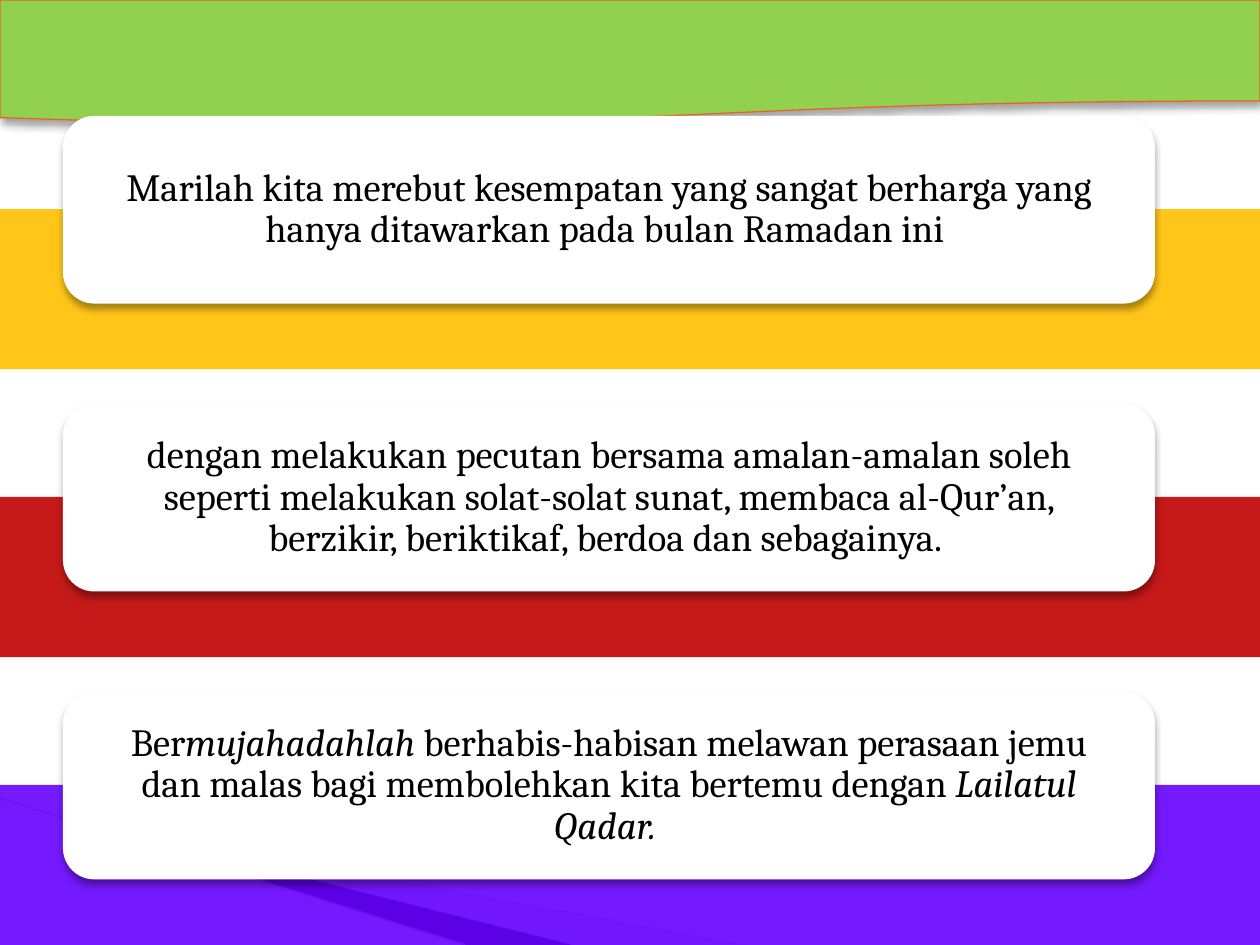
"""Builds a slide with three message cards over coloured bands."""
from lxml.etree import SubElement
from pptx import Presentation
from pptx.dml.color import RGBColor
from pptx.enum.shapes import MSO_CONNECTOR, MSO_SHAPE
from pptx.enum.text import MSO_ANCHOR, PP_ALIGN
from pptx.oxml.ns import qn
from pptx.util import Pt

COLORS = {
    "white": "FFFFFF", "black": "000000", "green": "92D050", "orange": "EB641B",
    "gold": "FFC000", "red": "C00000", "violet": "6600FF",
    "pale": "A0CBDC", "blue": "97C5D8",
}
WIDTH, HEIGHT = 720, 540
PITCH = 164.5
BAND_TOP, BAND_HEIGHT = 119.5, 91.5
CARD_LEFT, CARD_TOP, CARD_WIDTH, CARD_HEIGHT = 36, 66.25, 624, 107.25
MESSAGES = [
    ("gold", [("Marilah kita merebut kesempatan yang sangat berharga yang "
               "hanya ditawarkan pada bulan Ramadan ini ", False)]),
    ("red", [("dengan melakukan pecutan bersama amalan-amalan soleh seperti "
              "melakukan solat-solat sunat, membaca al-Qur’an, berzikir, "
              "beriktikaf, berdoa dan sebagainya. ", False)]),
    ("violet", [("Ber", False), ("mujahadahlah", True),
                (" berhabis-habisan melawan perasaan jemu dan malas bagi "
                 "membolehkan kita bertemu dengan ", False),
                ("Lailatul Qadar. ", True)]),
]


def rgb(name):
    """Return the named colour."""
    return RGBColor.from_string(COLORS[name])


def paint(shape, fill, opacity=100, line=None, shadow=False):
    """Set the fill, outline and shadow of a shape."""
    shape.fill.solid()
    shape.fill.fore_color.rgb = rgb(fill)
    if opacity < 100:
        color = shape.fill._xPr.find(qn("a:solidFill"))[0]
        SubElement(color, qn("a:alpha"), val=str(opacity * 1000))
    if line:
        shape.line.color.rgb = rgb(line)
        shape.line.width = Pt(0.75)
    else:
        shape.line.fill.background()
    shape.shadow.inherit = False
    if shadow:
        effects = shape._element.spPr.find(qn("a:effectLst"))
        outer = SubElement(effects, qn("a:outerShdw"), blurRad=str(Pt(4)),
                           dist=str(Pt(3)), dir="5400000", rotWithShape="0")
        color = SubElement(outer, qn("a:srgbClr"), val=COLORS["black"])
        SubElement(color, qn("a:alpha"), val="35000")


def add_block(page, kind, left, top, width, height, **look):
    """Add a painted preset shape."""
    block = page.shapes.add_shape(kind, Pt(left), Pt(top), Pt(width), Pt(height))
    paint(block, **look)
    return block


def add_wedge(page, points, **look):
    """Add a painted closed outline."""
    start, *rest = [(Pt(x), Pt(y)) for x, y in points]
    builder = page.shapes.build_freeform(*start, scale=1.0)
    builder.add_line_segments(rest, close=True)
    paint(builder.convert_to_shape(), **look)


def add_ray(page, start, end, color, width):
    """Add a straight line without a shadow."""
    ray = page.shapes.add_connector(
        MSO_CONNECTOR.STRAIGHT, *[Pt(value) for value in (*start, *end)])
    ray.line.color.rgb = rgb(color)
    ray.line.width = Pt(width)
    SubElement(ray._element.spPr, qn("a:effectLst"))


def add_span(para, text, italic=False, size=22, font="Cambria", color="black"):
    """Add formatted text to a paragraph."""
    span = para.add_run()
    span.text = text
    span.font.name = font
    span.font.size = Pt(size)
    span.font.italic = italic
    span.font.color.rgb = rgb(color)


def add_card(page, top, spans):
    """Add a rounded card with centred text."""
    card = add_block(page, MSO_SHAPE.ROUNDED_RECTANGLE, CARD_LEFT, top,
                     CARD_WIDTH, CARD_HEIGHT, fill="white", shadow=True)
    box = card.text_frame
    box.word_wrap = True
    box.vertical_anchor = MSO_ANCHOR.MIDDLE
    box.margin_left = box.margin_right = Pt(18.75)
    box.margin_top = box.margin_bottom = 0
    para = box.paragraphs[0]
    para.alignment = PP_ALIGN.CENTER
    para.line_spacing = 0.9
    for text, italic in spans:
        add_span(para, text, italic=italic)


def main():
    """Build and save the slide."""
    deck = Presentation()
    deck.slide_width, deck.slide_height = Pt(WIDTH), Pt(HEIGHT)
    page = deck.slides.add_slide(deck.slide_layouts[6])
    add_wedge(page, [(39.5, 468), (428, HEIGHT), (328, HEIGHT)],
              fill="pale", opacity=40)
    add_wedge(page, [(38, 467.5), (327, HEIGHT), (266, HEIGHT)], fill="black")
    add_ray(page, (0, 456), (266, HEIGHT), "blue", 0.95)
    add_block(page, MSO_SHAPE.FLOWCHART_DOCUMENT, 0, 0, WIDTH, 72,
              fill="green", line="orange", shadow=True)
    for row, (color, spans) in enumerate(MESSAGES):
        add_block(page, MSO_SHAPE.RECTANGLE, 0, BAND_TOP + row * PITCH,
                  WIDTH, BAND_HEIGHT, fill=color, opacity=90)
        add_card(page, CARD_TOP + row * PITCH, spans)
    deck.save("out.pptx")


if __name__ == "__main__":
    main()
